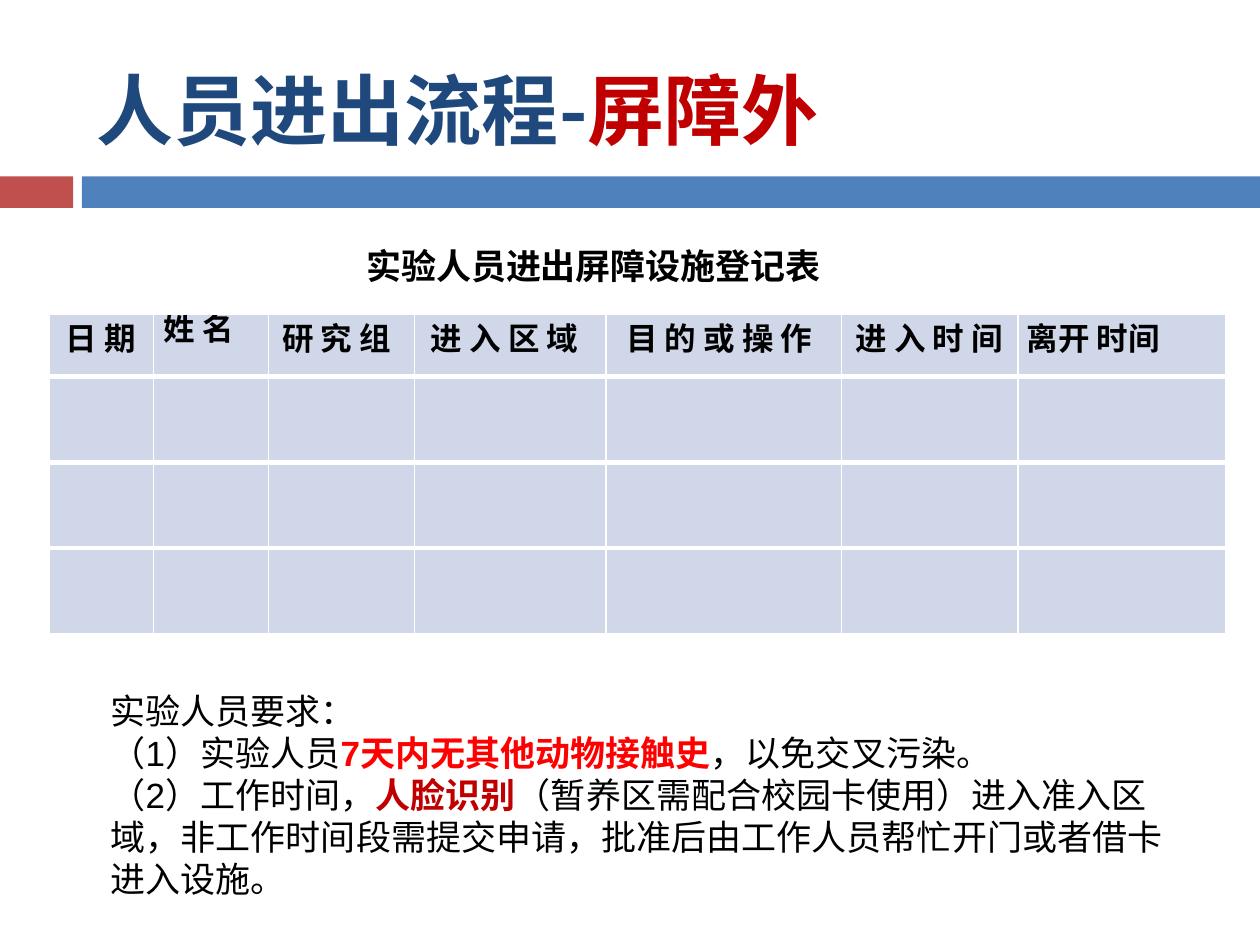
from lxml import etree
from pptx import Presentation
from pptx import util as u
from pptx.dml.color import RGBColor
from pptx.enum import shapes, text
from pptx.oxml.ns import qn

NAVY = RGBColor(0x1F, 0x48, 0x7C)
BLUE = RGBColor(0x4F, 0x81, 0xBC)
BRICK = RGBColor(0xC0, 0x50, 0x4D)
DARK = RGBColor(0xC0, 0, 0)
RED = RGBColor(0xFF, 0, 0)
BLACK = RGBColor(0, 0, 0)
PALE = RGBColor(0xD0, 0xD7, 0xE8)
CJK = "Noto Sans CJK SC"


class Deck:
    """Holds the style and the current slide."""

    def __init__(self, slide):
        self.slide = slide

    def bar(self, x, y, w, h, color):
        bar = self.slide.shapes.add_shape(
            shapes.MSO_SHAPE.RECTANGLE, *map(u.Inches, (x, y, w, h)))
        bar.shadow.inherit = False
        bar.fill.solid()
        bar.fill.fore_color.rgb = color
        bar.line.fill.background()

    def para(self, para, runs, size, bold=None, color=BLACK, face=CJK,
             left=0, lead=None):
        """Fill a paragraph with (text, color, bold, spacing) runs."""
        if left:
            props = para._p.get_or_add_pPr()
            props.set("marL", str(u.Inches(left)))
            props.set("indent", "0")
        if lead:
            para.line_spacing = lead
        font = para.font
        font.size, font.bold, font.name = u.Pt(size), bold, face
        font.color.rgb = color
        etree.SubElement(font._element, qn("a:ea"), typeface=CJK)
        for words, tint, heavy, space in runs:
            run = para.add_run()
            run.text = words
            if tint:
                run.font.color.rgb = tint
            if heavy:
                run.font.bold = True
            if space:
                run._r.get_or_add_rPr().set("spc", str(space))

    def box(self, x, y, w, h, paras, inset=None, **style):
        frame = self.slide.shapes.add_textbox(
            *map(u.Inches, (x, y, w, h))).text_frame
        frame.word_wrap = True
        if inset:
            (frame.margin_left, frame.margin_top, frame.margin_right,
             frame.margin_bottom) = map(u.Inches, inset)
        for i, runs in enumerate(paras):
            para = frame.add_paragraph() if i else frame.paragraphs[0]
            self.para(para, runs, **style)

    def edge(self, cell, side, width):
        line = etree.SubElement(cell._tc.get_or_add_tcPr(), qn("a:" + side),
                                w=str(u.Pt(width)))
        fill = etree.SubElement(line, qn("a:solidFill"))
        etree.SubElement(fill, qn("a:srgbClr"), val="FFFFFF")

    def table(self, x, y, cols, rows, heads):
        grid = self.slide.shapes.add_table(
            len(rows), len(cols),
            *map(u.Inches, (x, y, sum(cols), sum(rows)))).table
        for col, width in zip(grid.columns, cols):
            col.width = u.Inches(width)
        for row, height in zip(grid.rows, rows):
            row.height = u.Inches(height)
        last = len(rows) - 1
        for r in range(len(rows)):
            for c in range(len(cols)):
                cell = grid.cell(r, c)
                # Thick lines between rows, thin ones elsewhere
                for side, width in (("lnL", 1), ("lnR", 1),
                                    ("lnT", 3 if r else 1),
                                    ("lnB", 3 if r < last else 1)):
                    self.edge(cell, side, width)
                cell.fill.solid()
                cell.fill.fore_color.rgb = PALE
        for c, (words, left, lead, align) in enumerate(heads):
            cell = grid.cell(0, c)
            cell.margin_left = cell.margin_right = 0
            cell.margin_top = cell.margin_bottom = 0
            para = cell.text_frame.paragraphs[0]
            para.alignment = align
            self.para(para, [(words, None, None, 0)], 18, True,
                      left=left, lead=lead)


def main():
    show = Presentation()
    show.slide_width, show.slide_height = u.Inches(10), u.Inches(7.5)
    deck = Deck(show.slides.add_slide(show.slide_layouts[6]))

    # Band under the title
    deck.bar(0, 1.4, 0.58, 0.25, BRICK)
    deck.bar(0.65, 1.4, 9.35, 0.25, BLUE)

    # Title
    deck.box(0.63, 0.12, 8.73, 1.13,
             [[("人员进出流程", None, None, 0), ("-", None, None, -10),
               ("屏障外", DARK, None, 0)]],
             inset=(0, 0.38, 0, 0), size=44, bold=True, color=NAVY, left=0.14)

    # Register caption and table
    deck.box(2.9, 1.94, 3.67, 0.31,
             [[("实验人员进出屏障设施登记表", None, None, -10)]],
             inset=(0, 0, 0, 0), size=20, bold=True, left=0.01,
             lead=u.Pt(23.8))
    just = text.PP_ALIGN.JUSTIFY
    deck.table(0.39, 2.49, (0.83, 0.91, 1.16, 1.52, 1.87, 1.4, 1.65),
               (0.5, 0.68, 0.68, 0.68),
               (("日 期", 0.13, 1.01, None),
                ("姓 名", 0.08, u.Pt(20.2), None),
                ("研 究 组", 0.11, 1.0, just),
                ("进 入 区 域", 0.13, 1.0, just),
                ("目 的 或 操 作", 0.16, 1.0, just),
                ("进 入 时 间", 0.11, 1.0, just),
                ("离开 时间", 0.07, 1.01, None)))

    # Requirements
    deck.box(0.78, 5.42, 8.59, 1.78,
             [[("实验人员要求：", None, None, 0)],
              [("（1）实验人员", None, None, 0),
               ("7天内无其他动物接触史", RED, True, 0),
               ("，以免交叉污染。", None, None, 0)],
              [("（2）工作时间，", None, None, 0),
               ("人脸识别", DARK, True, 0),
               ("（暂养区需配合校园卡使用）进入准入区域，非工作时间段需提交申请，"
                "批准后由工作人员帮忙开门或者借卡进入设施。", None, None, 0)]],
             size=20, face="Arial")

    show.save("out.pptx")


if __name__ == "__main__":
    main()
